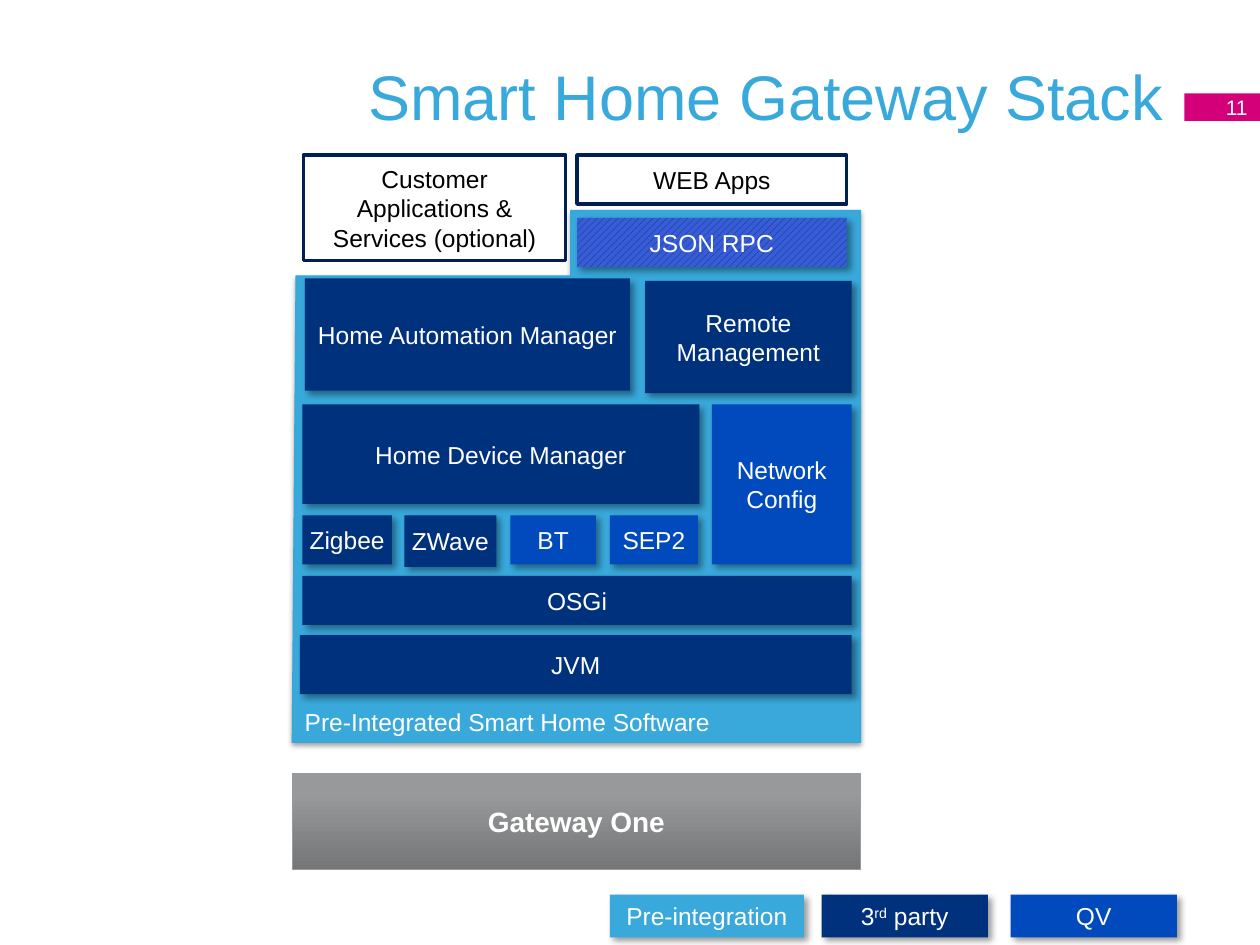
from lxml import etree
from pptx import Presentation
from pptx.dml.color import RGBColor
from pptx.enum import dml, shapes, text
from pptx.oxml.ns import qn
from pptx.util import Inches, Pt

WHITE = RGBColor(0xFF, 0xFF, 0xFF)
BLACK = RGBColor(0x00, 0x00, 0x00)
SKY = RGBColor(0x39, 0xA9, 0xDC)
SKY_EDGE = RGBColor(0x34, 0xA7, 0xDB)
NAVY = RGBColor(0x00, 0x31, 0x7D)
BLUE = RGBColor(0x00, 0x4A, 0xBD)
INDIGO = RGBColor(0x38, 0x5B, 0xD6)
OUTLINE = RGBColor(0x00, 0x20, 0x52)
PINK = RGBColor(0xD4, 0x00, 0x7A)
DARK_GREY = RGBColor(0x74, 0x76, 0x77)
LIGHT_GREY = RGBColor(0x97, 0x99, 0x9A)
GREY_EDGE = RGBColor(0x98, 0x9B, 0x9C)

LEFT, CENTER, RIGHT = text.PP_ALIGN.LEFT, text.PP_ALIGN.CENTER, text.PP_ALIGN.RIGHT
MIDDLE, BOTTOM = text.MSO_ANCHOR.MIDDLE, text.MSO_ANCHOR.BOTTOM
NO_INSET = (0, 0)
DEFAULT_INSET = (0.1, 0.05)

# Label, (left, top, width, height), fill
MODULES = [
    ("JVM", (2.38, 5.04, 4.38, 0.47), NAVY),
    ("OSGi", (2.4, 4.57, 4.36, 0.39), NAVY),
    ("Home Device Manager", (2.4, 3.21, 3.15, 0.79), NAVY),
    ("Network\nConfig", (5.65, 3.21, 1.11, 1.27), BLUE),
    ("Zigbee", (2.4, 4.09, 0.71, 0.39), NAVY),
    ("ZWave", (3.21, 4.09, 0.73, 0.41), NAVY),
    ("BT", (4.05, 4.09, 0.68, 0.39), BLUE),
    ("SEP2", (4.84, 4.09, 0.7, 0.39), BLUE),
    ("Home Automation Manager", (2.42, 2.21, 2.58, 0.89), NAVY),
    ("Remote Management", (5.12, 2.23, 1.64, 0.89), NAVY),
]
APPLICATIONS = [
    ("WEB Apps", (4.58, 1.23, 2.14, 0.39)),
    ("Customer Applications & Services (optional)", (2.41, 1.23, 2.08, 0.84)),
]
# Label, left, width, fill
LEGEND = [
    ("Pre-integration", 4.84, 1.54, SKY),
    ("3rd party", 6.52, 1.32, NAVY),
    ("QV", 8.02, 1.32, BLUE),
]
LEGEND_TOP, LEGEND_HEIGHT = 7.1, 0.34
SOFTWARE_OUTLINE = [(2.32, 5.89), (6.83, 5.89), (6.83, 1.67),
                    (4.53, 1.67), (4.53, 2.19), (2.35, 2.19)]


def write(box, words, size=14, color=WHITE, align=CENTER, anchor=MIDDLE,
          inset=DEFAULT_INSET, bold=False, wrap=True):
    frame = box.text_frame
    frame.text = words
    frame.word_wrap = wrap
    frame.vertical_anchor = anchor
    frame.margin_left = frame.margin_right = Inches(inset[0])
    frame.margin_top = frame.margin_bottom = Inches(inset[1])
    for para in frame.paragraphs:
        para.alignment = align
        for span in para.runs:
            style_span(span, size, color, bold)


def style_span(span, size=14, color=WHITE, bold=False):
    span.font.name = "Arial"
    span.font.size = Pt(size)
    span.font.color.rgb = color
    span.font.bold = bold


def paint(shape, fill=None, line=None, width=0.75):
    """Replace the theme look with a flat fill and an optional outline."""
    shape.shadow.inherit = False
    if fill is not None:
        shape.fill.solid()
        shape.fill.fore_color.rgb = fill
    if line is None:
        shape.line.fill.background()
    else:
        shape.line.color.rgb = line
        shape.line.width = Pt(width)


def cast_shadow(shape, alpha=40, blur=4, distance=3, angle=45):
    effects = shape._element.spPr.find(qn("a:effectLst"))
    shadow = etree.SubElement(
        effects, qn("a:outerShdw"), blurRad=str(Pt(blur)), dist=str(Pt(distance)),
        dir=str(angle * 60000), algn="tl", rotWithShape="0")
    color = etree.SubElement(shadow, qn("a:srgbClr"), val="000000")
    etree.SubElement(color, qn("a:alpha"), val=str(alpha * 1000))


def add_box(page, place, fill=None, line=None, width=0.75):
    box = page.shapes.add_shape(shapes.MSO_SHAPE.RECTANGLE, *map(Inches, place))
    paint(box, fill, line, width)
    return box


def add_module(page, label, place, fill):
    box = add_box(page, place, fill)
    cast_shadow(box)
    write(box, label, inset=NO_INSET)
    return box


def raise_ordinal(box, before, raised, after):
    """Split the label so that its ordinal ending is superscript."""
    para = box.text_frame.paragraphs[0]
    para.text = ""
    for words in (before, raised, after):
        span = para.add_run()
        span.text = words
        style_span(span)
        if words == raised:
            span._r.get_or_add_rPr().set("baseline", "30000")


def add_gateway(page):
    gateway = add_box(page, (2.32, 6.14, 4.51, 0.76), line=GREY_EDGE)
    gateway.fill.gradient()
    gateway.fill.gradient_angle = 90
    stops = gateway.fill.gradient_stops
    for stop, position, color in zip(stops, (0, 0.8), (DARK_GREY, LIGHT_GREY)):
        stop.position = position
        stop.color.rgb = color
    write(gateway, "Gateway One", size=16, inset=(0, 0.05), bold=True)


def add_software(page):
    points = [(Inches(x), Inches(y)) for x, y in SOFTWARE_OUTLINE]
    builder = page.shapes.build_freeform(*points[0])
    builder.add_line_segments(points[1:], close=True)
    software = builder.convert_to_shape()
    paint(software, SKY, SKY_EDGE)
    cast_shadow(software, alpha=38, blur=3.1, distance=1.6, angle=90)
    write(software, "Pre-Integrated Smart Home Software", align=LEFT, anchor=BOTTOM)


def add_heading(page):
    title = page.shapes.add_textbox(*map(Inches, (0.5, 0.13, 8.83, 1.25)))
    write(title, "Smart Home Gateway Stack", size=36, color=SKY, align=RIGHT)
    number = add_box(page, (9.4, 0.74, 0.6, 0.22), PINK)
    write(number, "11", size=12, align=RIGHT, wrap=False)


def main():
    deck = Presentation()
    deck.slide_width, deck.slide_height = Inches(10), Inches(7.5)
    page = deck.slides.add_slide(deck.slide_layouts[6])

    add_gateway(page)
    add_software(page)
    add_heading(page)

    for label, place, fill in MODULES:
        add_module(page, label, place, fill)

    rpc = add_module(page, "JSON RPC", (4.58, 1.73, 2.14, 0.39), INDIGO)
    rpc.fill.patterned()
    rpc.fill.pattern = dml.MSO_PATTERN.WIDE_UPWARD_DIAGONAL
    rpc.fill.fore_color.rgb = NAVY
    rpc.fill.back_color.rgb = INDIGO

    for label, place in APPLICATIONS:
        write(add_box(page, place, WHITE, OUTLINE, 2), label, color=BLACK)

    for label, left, width, fill in LEGEND:
        key = add_module(page, label, (left, LEGEND_TOP, width, LEGEND_HEIGHT), fill)
        if label == "3rd party":
            raise_ordinal(key, "3", "rd", " party")

    deck.save("out.pptx")


if __name__ == "__main__":
    main()
